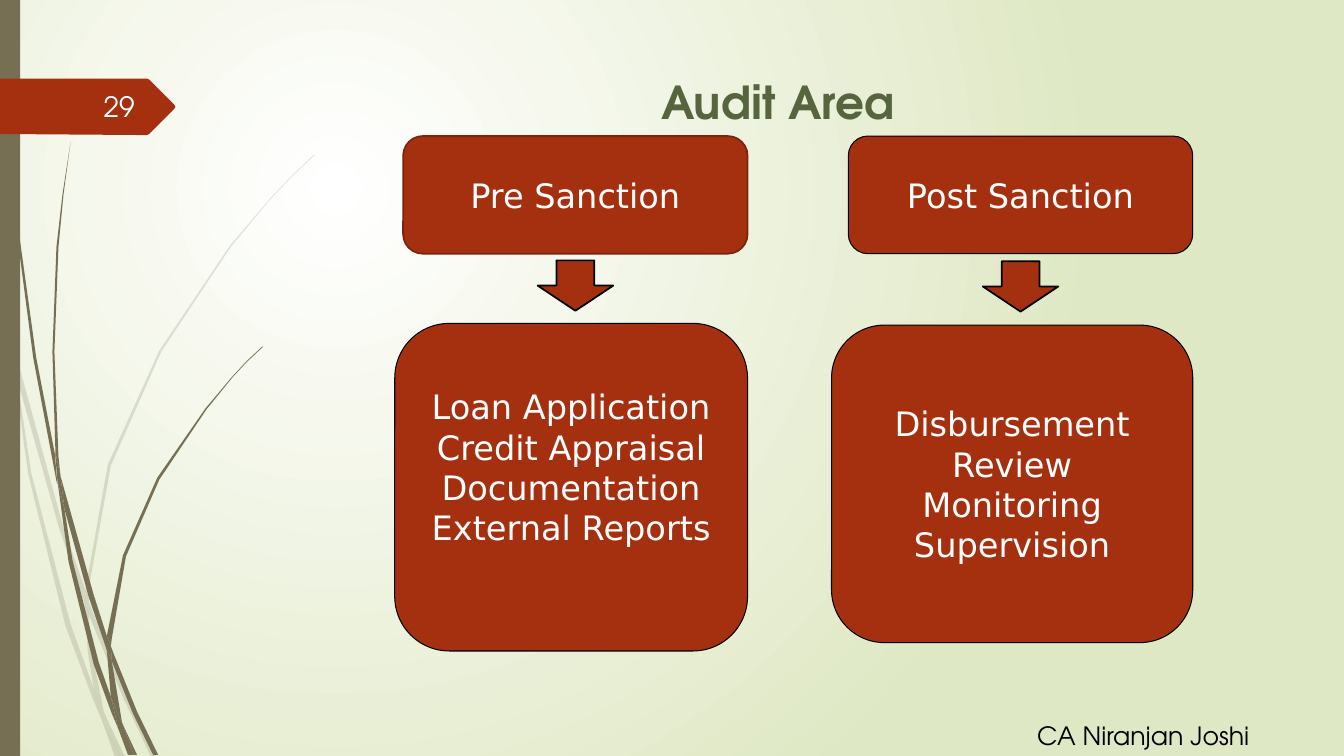
from dataclasses import dataclass

from lxml import etree
from pptx import Presentation
from pptx.dml.color import RGBColor
from pptx.enum.shapes import MSO_SHAPE
from pptx.enum.text import MSO_ANCHOR, PP_ALIGN
from pptx.oxml.ns import qn
from pptx.shapes.autoshape import Shape
from pptx.slide import Slide
from pptx.text.text import TextFrame
from pptx.util import Inches, Pt

ROUNDED = MSO_SHAPE.ROUNDED_RECTANGLE
PROCESS = MSO_SHAPE.FLOWCHART_ALTERNATE_PROCESS
ARROW = MSO_SHAPE.DOWN_ARROW
RECTANGLE = MSO_SHAPE.RECTANGLE
CENTER, RIGHT = PP_ALIGN.CENTER, PP_ALIGN.RIGHT
TOP, MIDDLE = MSO_ANCHOR.TOP, MSO_ANCHOR.MIDDLE

WHITE = RGBColor(0xFF, 0xFF, 0xFF)
NUMBER_WHITE = RGBColor(0xFE, 0xFF, 0xFF)
BLACK = RGBColor(0x00, 0x00, 0x00)
PALE_GREEN = RGBColor(0xDF, 0xE8, 0xC4)
OLIVE = RGBColor(0x76, 0x6F, 0x54)
TITLE_GREEN = RGBColor(0x56, 0x65, 0x3E)
RUST = RGBColor(0xA5, 0x30, 0x10)
DARK_RUST = RGBColor(0x7A, 0x24, 0x0C)

HEADING_FONT = "TeX Gyre Adventor"
BODY_FONT = "DejaVu Sans"

COLUMNS, ROWS = 160, 90
CELL = Inches(1) / 12
FINE = Inches(1) / 100

Outline = list[tuple[int, int]]


@dataclass(frozen=True)
class Area:
    column: float
    row: float
    columns: float
    rows: float

    def box(self) -> list[int]:
        return [round(n * CELL) for n in (self.column, self.row, self.columns, self.rows)]


@dataclass(frozen=True)
class Block:
    kind: MSO_SHAPE
    area: Area
    text: str = ""
    line: RGBColor = BLACK
    weight: float = 0.75
    blank_rows: float = 0


@dataclass(frozen=True)
class Label:
    area: Area
    text: str
    size: float
    color: RGBColor
    align: PP_ALIGN
    anchor: MSO_ANCHOR = TOP


BLOCKS = [
    Block(ROUNDED, Area(101, 16.2, 41, 14), "Post Sanction"),
    Block(PROCESS, Area(47, 38.5, 42, 39),
          "Loan Application\nCredit Appraisal\nDocumentation\nExternal Reports", blank_rows=4.8),
    Block(PROCESS, Area(99, 38.7, 43, 37.8),
          "Disbursement\nReview\nMonitoring\nSupervision"),
    Block(ARROW, Area(64, 31, 9, 6), weight=1.25),
    Block(ARROW, Area(117, 31.1, 9, 6), weight=1.25),
    Block(ROUNDED, Area(48, 16.2, 41, 14), "Pre Sanction", DARK_RUST, 1.25),
]

TITLE = Label(Area(34.1, 8.2, 117, 8.3), "Audit Area", 32.4, TITLE_GREEN, CENTER)
LABELS = [
    Label(Area(7, 10.3, 10.2, 4.8), "29", 20, NUMBER_WHITE, RIGHT, MIDDLE),
    Label(Area(115.1, 85.2, 42, 4.8), "CA Niranjan Joshi", 18, BLACK, CENTER),
]

PALE_GRASS: list[Outline] = [
    [(11, 350), (9, 322), (0, 282), (0, 299), (10, 344)],
    [(58, 522), (84, 599), (85, 586), (62, 520), (14, 345), (17, 376)],
    [(92, 607), (88, 596), (88, 610), (123, 694), (150, 751), (155, 751), (127, 692)],
    [(119, 751), (124, 751), (105, 711)],
    [(93, 683), (70, 619), (31, 469), (17, 376), (11, 350), (28, 470), (65, 621), (92, 693),
     (101, 714), (99, 707)],
    [(84, 599), (87, 646), (93, 683), (96, 692), (105, 711), (103, 706), (91, 646), (88, 610),
     (88, 608)],
    [(88, 584), (110, 462), (160, 349), (229, 245), (268, 198), (290, 175), (312, 154),
     (312, 153), (289, 175), (268, 197), (228, 244), (158, 348), (107, 461), (85, 584),
     (85, 586), (88, 596)],
    [(101, 714), (114, 751), (119, 751)],
    [(88, 608), (88, 610), (88, 596), (85, 586), (84, 599)],
    [(96, 692), (93, 683), (99, 707), (101, 714), (119, 751), (105, 711)],
]

DARK_GRASS: list[Outline] = [
    [(7, 110), (17, 233), (33, 355), (56, 477), (57, 481), (55, 457), (55, 453), (36, 355),
     (19, 232), (8, 109), (5, 48), (4, 0), (3, 0), (4, 48)],
    [(88, 592), (106, 645), (106, 633), (106, 631), (93, 590), (60, 472), (64, 505)],
    [(113, 649), (110, 641), (111, 656), (132, 708), (152, 749), (157, 749), (136, 706)],
    [(110, 691), (98, 657), (72, 556), (64, 505), (57, 477), (68, 557), (93, 659), (111, 708),
     (117, 722), (116, 717)],
    [(60, 472), (58, 453), (54, 349), (58, 245), (63, 193), (70, 141), (62, 193), (56, 245),
     (52, 349), (55, 449)],
    [(133, 749), (136, 749), (122, 719)],
    [(57, 477), (64, 505), (60, 472), (55, 449), (55, 453)],
    [(111, 633), (125, 552), (158, 476), (205, 406), (231, 374), (245, 359), (261, 344),
     (260, 344), (245, 358), (231, 373), (204, 405), (156, 474), (122, 551), (106, 631),
     (110, 641)],
    [(117, 722), (127, 749), (131, 749)],
    [(106, 645), (110, 691), (116, 706), (122, 719), (121, 716), (111, 656), (109, 651)],
    [(106, 645), (109, 651), (111, 656), (110, 641), (106, 631), (106, 633)],
    [(116, 706), (110, 691), (116, 717), (117, 722), (130, 749), (133, 749), (122, 719)],
]

PENNANT: Outline = [(173, 108), (148, 133), (146, 134), (136, 134), (0, 133), (0, 78),
                    (146, 78), (148, 79), (173, 104), (174, 106)]


def paint_background(s: Slide) -> None:
    fill = s.background.fill
    fill.gradient()
    for stop, color in zip(fill.gradient_stops, (WHITE, PALE_GREEN)):
        stop.color.rgb = color
    gradient = s.element.find(".//" + qn("a:gradFill"))
    gradient.remove(gradient.find(qn("a:lin")))
    circle = etree.SubElement(gradient, qn("a:path"), {"path": "circle"})
    etree.SubElement(circle, qn("a:fillToRect"),
                     {"l": "50000", "t": "50000", "r": "100000", "b": "100000"})


def paint(sp: Shape, color: RGBColor, opacity: int = 100) -> None:
    sp.shadow.inherit = False
    sp.fill.solid()
    sp.fill.fore_color.rgb = color
    sp.line.fill.background()
    if opacity < 100:
        tint = sp.fill._xPr.find(".//" + qn("a:srgbClr"))
        etree.SubElement(tint, qn("a:alpha"), {"val": str(opacity * 1000)})


def draw_outline(shapes, outline: Outline, color: RGBColor, opacity: int = 100) -> None:
    points = [(round(x * FINE), round(y * FINE)) for x, y in outline]
    builder = shapes.build_freeform(*points[0])
    builder.add_line_segments(points[1:], close=True)
    paint(builder.convert_to_shape(), color, opacity)


def write(tf: TextFrame, text: str, font: str, size: float, color: RGBColor,
          align: PP_ALIGN, anchor: MSO_ANCHOR, bold: bool = False) -> None:
    tf.text = text
    tf.word_wrap = True
    tf.vertical_anchor = anchor
    for p in tf.paragraphs:
        p.alignment = align
        for r in p.runs:
            r.font.name, r.font.size, r.font.bold = font, Pt(size), bold
            r.font.color.rgb = color


def draw_label(sp: Shape, label: Label, bold: bool = False) -> None:
    sp.left, sp.top, sp.width, sp.height = label.area.box()
    write(sp.text_frame, label.text, HEADING_FONT, label.size, label.color,
          label.align, label.anchor, bold)


def draw_block(s: Slide, block: Block) -> None:
    sp = s.shapes.add_shape(block.kind, *block.area.box())
    paint(sp, RUST)
    sp.line.color.rgb = block.line
    sp.line.width = Pt(block.weight)
    if block.text:
        write(sp.text_frame, block.text, BODY_FONT, 24, WHITE, CENTER, MIDDLE)
        sp.text_frame.margin_bottom += round(block.blank_rows * CELL)


def main() -> None:
    prs = Presentation()
    prs.slide_width, prs.slide_height = round(COLUMNS * CELL), round(ROWS * CELL)
    s = prs.slides.add_slide(prs.slide_layouts[5])
    paint_background(s)
    for grass, opacity in ((PALE_GRASS, 20), (DARK_GRASS, 100)):
        group = s.shapes.add_group_shape()
        for outline in grass:
            draw_outline(group.shapes, outline, OLIVE, opacity)
    paint(s.shapes.add_shape(RECTANGLE, *Area(0, 0, 2.4, ROWS).box()), OLIVE)
    draw_outline(s.shapes, PENNANT, RUST)
    draw_label(s.shapes.title, TITLE, bold=True)
    for label in LABELS:
        draw_label(s.shapes.add_textbox(*label.area.box()), label)
    for block in BLOCKS:
        draw_block(s, block)
    prs.save("out.pptx")


if __name__ == "__main__":
    main()
